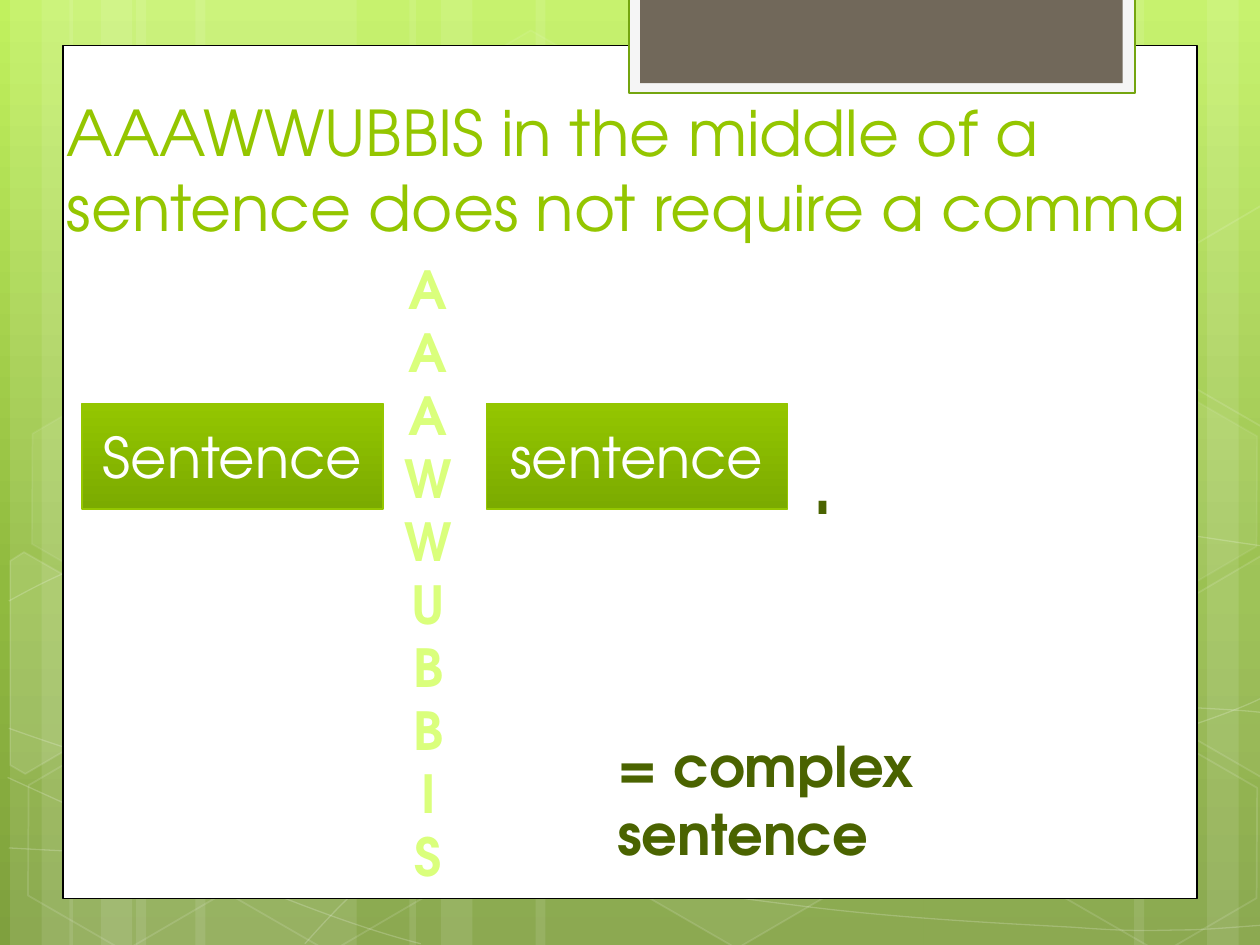
"""Build a grammar slide on AAAWWUBBIS words in the middle of a sentence."""
from copy import deepcopy
from math import cos, radians, sin

from lxml.etree import SubElement
from pptx import Presentation
from pptx.dml.color import RGBColor
from pptx.enum.shapes import MSO_SHAPE
from pptx.enum.text import MSO_ANCHOR, MSO_AUTO_SIZE, PP_ALIGN
from pptx.oxml.ns import qn
from pptx.util import Inches, Pt

FONT = "TeX Gyre Adventor"
WHITE, LIME, DARK_GREEN, PALE_LIME = "FFFFFF", "94C600", "4A6300", "DAFF7C"
TILT = 30


def set_color(color_format, value):
    """Set a colour from a hex string."""
    color_format.rgb = RGBColor.from_string(value)


def style(shape, fill=None, line=None, width=1, fill_opacity=100, line_opacity=100):
    """Set fill, outline and opacity, without a shadow."""
    shape.shadow.inherit = False
    for target, value in ((shape.fill, fill), (shape.line.fill, line)):
        if value:
            target.solid()
            set_color(target.fore_color, value)
        else:
            target.background()
    if line:
        shape.line.width = Pt(width)
    properties = shape.element.spPr
    for parent, opacity in ((properties, fill_opacity), (properties.find(qn("a:ln")), line_opacity)):
        color = parent.find(f"{qn('a:solidFill')}/{qn('a:srgbClr')}")
        if color is not None and opacity < 100:
            SubElement(color, qn("a:alpha")).set("val", str(opacity * 1000))


presentation = Presentation()
presentation.slide_width, presentation.slide_height = Inches(10), Inches(7.5)
slide = presentation.slides.add_slide(presentation.slide_layouts[5])
shapes = slide.shapes

background = slide.background.fill
background.gradient()
background.gradient_angle = 270
stop_list = slide.element.find(f".//{qn('a:gsLst')}")
stop_list.append(deepcopy(stop_list[-1]))
for stop, (position, value) in zip(
    background.gradient_stops, [(0, "C1F15E"), (0.62, "90BA3F"), (1, "7FA03E")]
):
    stop.position = position
    set_color(stop.color, value)

bands = [
    (1.08, 1.75, 0), (0.08, 0.5, 0), (0.33, 0.83, 0), (1.55, 1.75, 0), (0.55, 0.5, 0),
    (0.8, 0.83, 0), (7.33, 1.75, 180), (9.58, 0.5, 180), (9, 0.83, 180), (4.25, 3.08, 0),
    (3.25, 0.5, 0), (3.5, 0.83, 0),
]
for left, width, rotation in bands:
    band = shapes.add_shape(MSO_SHAPE.RECTANGLE, Inches(left), 0, Inches(width), Inches(7.5))
    band.rotation = rotation
    style(band, WHITE, fill_opacity=10)

curves = [
    [(0.07, 6.73), (0.61, 6.76), (1.15, 6.79), (1.9, 6.78), (2.65, 6.77), (3.58, 6.75),
     (4.58, 6.65), (5.58, 6.55), (7, 6.36), (7.92, 6.17), (8.83, 5.98), (9.77, 5.68), (10.07, 5.51)],
    [(0.07, 4.77), (0.36, 4.61), (0.65, 4.46), (1.21, 4.31), (1.78, 4.16), (2.59, 3.94),
     (3.47, 3.87), (4.36, 3.8), (5.44, 3.79), (6.54, 3.87), (7.64, 3.95), (9.47, 4.26), (10.07, 4.34)],
    [(0.06, 6.17), (1.27, 6.72), (2.47, 7.27), (3.34, 7.49)],
    [(0.07, 5.78), (0.38, 5.89), (0.7, 6), (1.28, 6.16), (1.86, 6.31), (2.73, 6.56),
     (3.57, 6.73), (4.4, 6.9), (5.45, 7.08), (6.28, 7.18), (7.11, 7.29), (8, 7.33),
     (8.53, 7.36), (9.05, 7.4), (9.19, 7.38), (9.45, 7.38), (9.71, 7.37), (9.89, 7.35), (10.07, 7.34)],
    [(2.42, 7.49), (2.6, 7.29), (2.78, 7.09), (3.02, 6.91), (3.26, 6.73), (3.6, 6.53),
     (3.88, 6.39), (4.16, 6.25), (4.33, 6.19), (4.7, 6.09), (5.06, 5.99), (5.73, 5.85),
     (6.08, 5.78), (6.44, 5.71), (6.49, 5.71), (6.8, 5.69), (7.11, 5.66), (7.6, 5.63),
     (7.94, 5.62), (8.29, 5.61), (8.86, 5.62), (8.86, 5.62), (9.08, 5.62), (9.3, 5.62),
     (9.53, 5.62), (9.71, 5.63), (9.88, 5.64), (9.97, 5.65), (10.06, 5.66), (10.03, 5.65), (10.06, 5.66)],
]
for points in curves:
    corners = [tuple(map(Inches, point)) for point in points]
    builder = shapes.build_freeform(*corners[0])
    builder.add_line_segments(corners[1:], close=False)
    curve = builder.convert_to_shape()
    segments = curve.element.findall(f".//{qn('a:lnTo')}")
    outline = segments[0].getparent()
    for start in range(0, len(segments), 3):
        bezier = SubElement(outline, qn("a:cubicBezTo"))
        for segment in segments[start:start + 3]:
            bezier.append(segment[0])
            outline.remove(segment)
    style(curve, line=WHITE, width=0.75, line_opacity=20)

hexagons = [
    (3.34, 0.36, 4, 8), (4.97, 5.89, 6, 12), (0.11, 5.91, 0, 12), (0.14, 3.12, 7, 8),
    (1.74, 5.92, 0, 12), (7.53, 4.53, 10, 12), (8.34, 5.93, 0, 12), (8.34, 3.14, 7, 8),
]
for left, top, fill_opacity, line_opacity in hexagons:
    hexagon = shapes.add_shape(
        MSO_SHAPE.HEXAGON, Inches(left), Inches(top), Inches(1.75), Inches(1.52)
    )
    hexagon.adjustments[0] = 0.285
    hexagon.rotation = TILT
    style(hexagon, WHITE if fill_opacity else None, WHITE, 1, fill_opacity, line_opacity)

cut_hexagons = [
    (10, (0.36, 5.35),
     [(0.08, 4.45), (0.19, 4.38), (0.96, 4.82), (0.95, 5.7), (0.2, 6.14), (0.08, 6.07)]),
    (4, (9.85, 5.2),
     [(9.26, 4.85), (10.01, 4.41), (10.09, 4.46), (10.09, 6.13), (10.02, 6.17), (9.26, 5.73)]),
    (0, (9.85, 2.41),
     [(9.26, 2.07), (10.01, 1.63), (10.1, 1.68), (10.09, 3.35), (10.02, 3.39), (9.26, 2.95)]),
]
cosine, sine = cos(radians(TILT)), sin(radians(TILT))
for fill_opacity, (center_x, center_y), points in cut_hexagons:
    corners = []
    for x, y in points:
        across, down = x - center_x, y - center_y
        corners.append((
            Inches(center_x + across * cosine + down * sine),
            Inches(center_y - across * sine + down * cosine),
        ))
    builder = shapes.build_freeform(*corners[0])
    builder.add_line_segments(corners[1:], close=True)
    cut_hexagon = builder.convert_to_shape()
    cut_hexagon.rotation = TILT
    style(cut_hexagon, WHITE if fill_opacity else None, WHITE, 1, fill_opacity, 12)

panels = [
    ((0.5, 0.36, 9, 6.77), WHITE, "000000", 0.75),
    ((4.99, -0.02, 4.02, 0.76), "F5F5F5", "74A50F", 1.25),
    ((5.08, -0.02, 3.83, 0.68), "71685A", None, 0),
]
for box, fill, line, width in panels:
    style(shapes.add_shape(MSO_SHAPE.RECTANGLE, *map(Inches, box)), fill, line, width)

title = shapes.title
title.element.getparent().append(title.element)
title.left, title.top, title.width, title.height = map(Inches, (0.43, 0.74, 9.44, 1.25))

letters = shapes.add_textbox(*map(Inches, (3.11, 1.99, 0.58, 5.15)))
sentence_boxes = []
for left in (0.65, 3.86):
    box = shapes.add_shape(
        MSO_SHAPE.RECTANGLE, Inches(left), Inches(3.2), Inches(2.39), Inches(0.84)
    )
    style(box, line=LIME, width=0.75)
    box.fill.gradient()
    box.fill.gradient_angle = 270
    for stop, position, value in zip(box.fill.gradient_stops, (0, 1), (LIME, "7BAB00")):
        stop.position = position
        set_color(stop.color, value)
    sentence_boxes.append(box)
period = shapes.add_textbox(*map(Inches, (6.32, 3.2, 0.43, 1.11)))
result = shapes.add_textbox(*map(Inches, (4.8, 5.76, 4.6, 0.64)))

LEFT, CENTER = PP_ALIGN.LEFT, PP_ALIGN.CENTER
TOP, MIDDLE, BOTTOM = MSO_ANCHOR.TOP, MSO_ANCHOR.MIDDLE, MSO_ANCHOR.BOTTOM
texts = [
    (title, "AAAWWUBBIS in the middle of a sentence does not require a comma",
     36, LIME, False, LEFT, BOTTOM),
    (letters, "\n".join("AAAWWUBBIS"), 30, PALE_LIME, True, CENTER, TOP),
    (sentence_boxes[0], "Sentence", 32, WHITE, False, CENTER, MIDDLE),
    (sentence_boxes[1], "sentence", 32, WHITE, False, CENTER, MIDDLE),
    (period, ".", 60, DARK_GREEN, False, LEFT, TOP),
    (result, "= complex sentence", 32, DARK_GREEN, True, LEFT, TOP),
]
for shape, text, size, value, bold, alignment, anchor in texts:
    frame = shape.text_frame
    frame.text = text
    frame.word_wrap = True
    frame.auto_size = MSO_AUTO_SIZE.NONE
    frame.vertical_anchor = anchor
    for paragraph in frame.paragraphs:
        paragraph.alignment = alignment
        paragraph.font.name = FONT
        paragraph.font.size = Pt(size)
        paragraph.font.bold = bold
        set_color(paragraph.font.color, value)

presentation.save("out.pptx")
